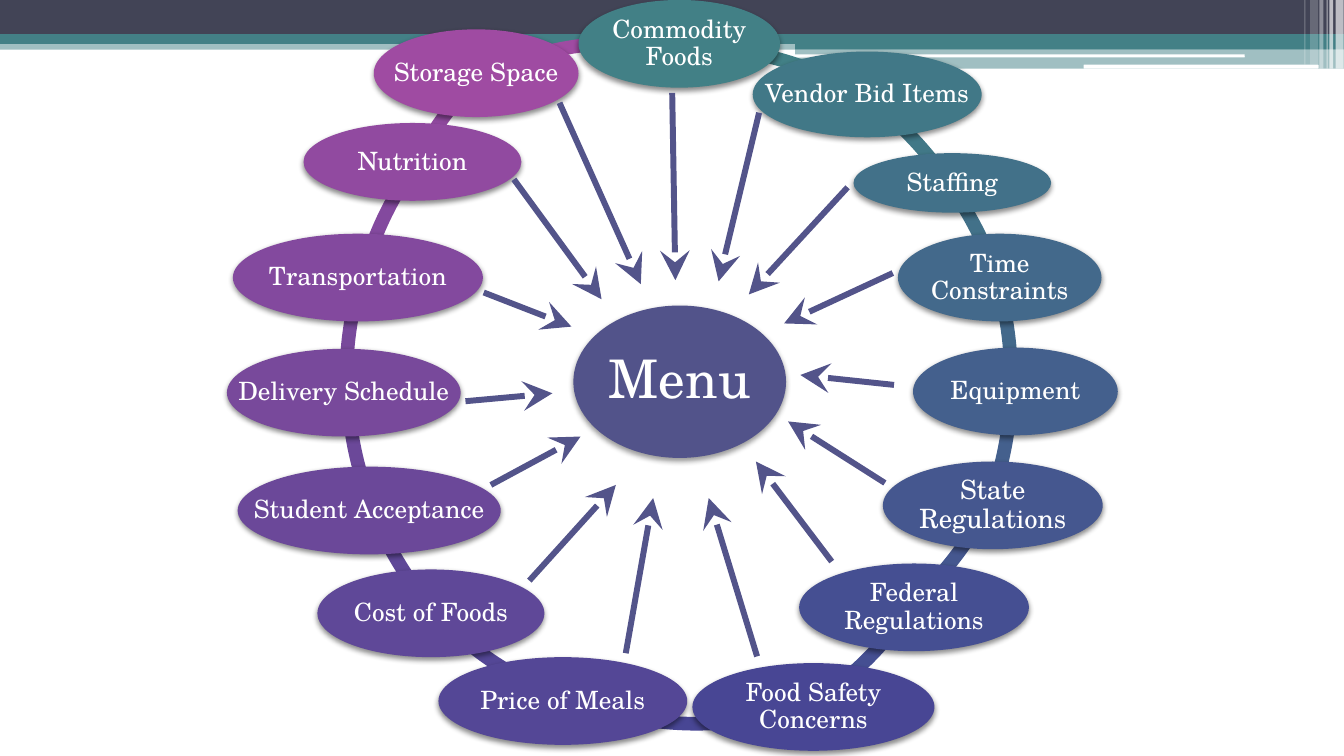
import lxml.etree
import pptx
import pptx.dml.color
import pptx.enum.shapes
import pptx.enum.text
import pptx.oxml.ns
import pptx.util

Cm = pptx.util.Cm
SHAPES = pptx.enum.shapes.MSO_SHAPE
FONT = "TeX Gyre Schola"
SLIDE_WIDTH, SLIDE_HEIGHT = 33.87, 19.05
RING_DIAMETER = 17.17
RING_THICKNESS = 0.02

COLOURS = {
    "white": "FFFFFF", "navy": "424456", "teal": "438086",
    "menu": "52538A", "arrow": "53548A", "shadow": "000000",
    "Commodity Foods": "428086", "Vendor Bid Items": "417887",
    "Staffing": "427189", "Time Constraints": "43698B",
    "Equipment": "44608D", "State Regulations": "45578F",
    "Federal Regulations": "454F92", "Food Safety Concerns": "484694",
    "Price of Meals": "544796", "Cost of Foods": "5F4898",
    "Student Acceptance": "6B4899", "Delivery Schedule": "78499B",
    "Transportation": "83499E", "Nutrition": "914AA0",
    "Storage Space": "9F4BA2",
}

# Box in cm, colour, opacity in percent
STRIPES = [
    ((0, 1.02, SLIDE_WIDTH, 0.23), "teal", 50),
    ((0, 0, SLIDE_WIDTH, 0.86), "navy", 100),
    ((0, 0.86, SLIDE_WIDTH, 0.25), "teal", 100),
    ((20.04, 0.99, 13.83, 0.25), "teal", 100),
    ((20.04, 1.22, 13.83, 0.51), "teal", 50),
]
ROUNDED_STRIPES = [(20.02, 1.37, 11.35, 0.08), (27.31, 1.63, 5.92, 0.1)]
# Left, width, height in cm, opacity in percent
VERTICAL_BARS = [
    (33.66, 0.2, 1.73, 65), (33.5, 0.1, 1.73, 65), (33.43, 0.03, 1.73, 60),
    (33.25, 0.1, 1.73, 40), (33.02, 0.2, 1.63, 20), (32.87, 0.03, 1.63, 30),
]

# Name, ellipse box, ring corner, arc start and end, text size, wraps
FACTORS = [
    ("Commodity Foods", (14.58, 0, 5.08, 2.21), (8.81, 1.02), (160.84, 180.98), 18, True),
    ("Vendor Bid Items", (18.97, 1.3, 5.77, 2.16), (8.31, 0.69), (183.53, 196.11), 18, False),
    ("Staffing", (21.51, 3.86, 4.98, 1.5), (8.53, 1.02), (194.48, 205.29), 18, False),
    ("Time Constraints", (22.63, 5.89, 5.13, 2.21), (8.48, 0.91), (205.72, 1.48), 18, True),
    ("Equipment", (23.01, 8.76, 5.16, 2.21), (8.48, 1.09), (0.74, 12.67), 18, False),
    ("State Regulations", (22.25, 11.63, 5.54, 2.21), (8.81, 0.33), (16.03, 29.11), 19, True),
    ("Federal Regulations", (20.14, 14.2, 5.79, 2.21), (7.34, 2.06), (19.82, 34.43), 18, True),
    ("Food Safety Concerns", (17.45, 16.71, 6.1, 2.21), (8.97, 1.24), (41.79, 67.97), 18, True),
    ("Price of Meals", (11.05, 16.56, 6.27, 2.21), (8.51, 1.09), (66.07, 82.3), 18, False),
    ("Cost of Foods", (8, 14.35, 5.72, 2.21), (8.66, 1.24), (83.21, 95.49), 18, False),
    ("Student Acceptance", (5.99, 11.76, 6.63, 2.21), (8.59, 1.02), (94.42, 106.74), 18, False),
    ("Delivery Schedule", (5.72, 8.79, 5.89, 2.21), (8.56, 0.91), (106.38, 118.3), 18, False),
    ("Transportation", (5.87, 5.89, 6.3, 2.21), (8.69, 0.51), (116.6, 129.64), 18, False),
    ("Nutrition", (7.65, 3.1, 5.49, 1.96), (9.42, -0.71), (123.84, 135.04), 18, False),
    ("Storage Space", (9.42, 0.74, 5.16, 2.21), (7.14, 0.91), (146.48, 167.69), 18, False),
]
MENU_BOX = (14.45, 7.7, 5.36, 3.84)

# Start x, y and end x, y in cm, clockwise from the top
ARROWS = [
    (16.94, 2.34, 17.02, 7.06), (19.13, 2.84, 18.11, 7.09),
    (21.36, 4.72, 18.87, 7.42), (22.5, 6.88, 19.76, 8.15),
    (22.53, 9.7, 20.17, 9.45), (22.3, 12.17, 19.86, 10.62),
    (20.96, 14.15, 19.05, 11.63), (19.08, 16.54, 17.86, 12.55),
    (15.77, 16.46, 16.46, 12.55), (13.34, 14.63, 15.52, 12.22),
    (12.37, 12.22, 14.63, 11), (11.73, 10.11, 13.92, 9.91),
    (12.19, 7.37, 14.4, 8.23), (12.95, 4.52, 15.16, 7.54),
    (14.1, 2.59, 16.15, 7.16),
]


def rgb(colour):
    return pptx.dml.color.RGBColor.from_string(COLOURS[colour])


def add_child(parent, tag, **attributes):
    child = lxml.etree.SubElement(parent, pptx.oxml.ns.qn(tag))
    for name, value in attributes.items():
        child.set(name, str(value))
    return child


def add_filled_shape(slide, kind, area, box, colour, opacity=100):
    """Add a borderless shape whose box is relative to the area."""
    left, top, width, height = box
    shape = slide.shapes.add_shape(
        kind, Cm(area[0] + left), Cm(area[1] + top), Cm(width), Cm(height))
    shape.shadow.inherit = False
    shape.fill.solid()
    shape.fill.fore_color.rgb = rgb(colour)
    shape.line.fill.background()
    if opacity < 100:
        fill_colour = shape._element.spPr.find(".//" + pptx.oxml.ns.qn("a:srgbClr"))
        add_child(fill_colour, "a:alpha", val=opacity * 1000)
    return shape


def add_header(slide, area):
    for box, colour, opacity in STRIPES:
        add_filled_shape(slide, SHAPES.RECTANGLE, area, box, colour, opacity)
    for box in ROUNDED_STRIPES:
        add_filled_shape(slide, SHAPES.ROUNDED_RECTANGLE, area, box, "white")
    for left, width, height, opacity in VERTICAL_BARS:
        add_filled_shape(slide, SHAPES.RECTANGLE, area,
                         (left, 0, width, height), "white", opacity)


def add_bubble(slide, area, box, text, colour, size, wraps, shadow_opacity):
    bubble = add_filled_shape(slide, SHAPES.OVAL, area, box, colour)
    effects = bubble._element.spPr.find(pptx.oxml.ns.qn("a:effectLst"))
    shadow = add_child(effects, "a:outerShdw", blurRad=pptx.util.Pt(4),
                       dist=pptx.util.Pt(2), dir=5400000, rotWithShape=0)
    shadow_colour = add_child(shadow, "a:srgbClr", val=COLOURS["shadow"])
    add_child(shadow_colour, "a:alpha", val=shadow_opacity * 1000)

    frame = bubble.text_frame
    frame.margin_left = frame.margin_right = 0
    frame.margin_top = frame.margin_bottom = 0
    frame.vertical_anchor = pptx.enum.text.MSO_ANCHOR.MIDDLE
    frame.word_wrap = wraps
    paragraph = frame.paragraphs[0]
    paragraph.text = text
    paragraph.alignment = pptx.enum.text.PP_ALIGN.CENTER
    paragraph.line_spacing = 0.9
    paragraph.font.name = FONT
    paragraph.font.size = pptx.util.Pt(size)
    paragraph.font.color.rgb = rgb("white")


def add_wheel(slide, area):
    """Add the ring of factors around the menu."""
    for name, _, corner, angles, _, _ in reversed(FACTORS):
        box = (*corner, RING_DIAMETER, RING_DIAMETER)
        arc = add_filled_shape(slide, SHAPES.BLOCK_ARC, area, box, name)
        for index, value in enumerate((*angles, RING_THICKNESS)):
            arc.adjustments[index] = value
    add_bubble(slide, area, MENU_BOX, "Menu", "menu", 38, False, 40)
    for name, box, _, _, size, wraps in FACTORS:
        add_bubble(slide, area, box, name, name, size, wraps, 45)


def add_arrows(slide, area):
    left, top = area[:2]
    for start_x, start_y, end_x, end_y in ARROWS:
        arrow = slide.shapes.add_connector(
            pptx.enum.shapes.MSO_CONNECTOR.STRAIGHT,
            Cm(left + start_x), Cm(top + start_y), Cm(left + end_x), Cm(top + end_y))
        arrow.line.color.rgb = rgb("arrow")
        arrow.line.width = pptx.util.Pt(4.25)
        add_child(arrow.line._get_or_add_ln(), "a:tailEnd", type="stealth", w="lg", len="lg")
        add_child(arrow._element.spPr, "a:effectLst")


def main():
    presentation = pptx.Presentation()
    presentation.slide_width = Cm(SLIDE_WIDTH)
    presentation.slide_height = Cm(SLIDE_HEIGHT)
    slide = presentation.slides.add_slide(presentation.slide_layouts[6])
    area = (0, 0, SLIDE_WIDTH, SLIDE_HEIGHT)
    add_header(slide, area)
    add_wheel(slide, area)
    add_arrows(slide, area)
    presentation.save("out.pptx")


if __name__ == "__main__":
    main()
